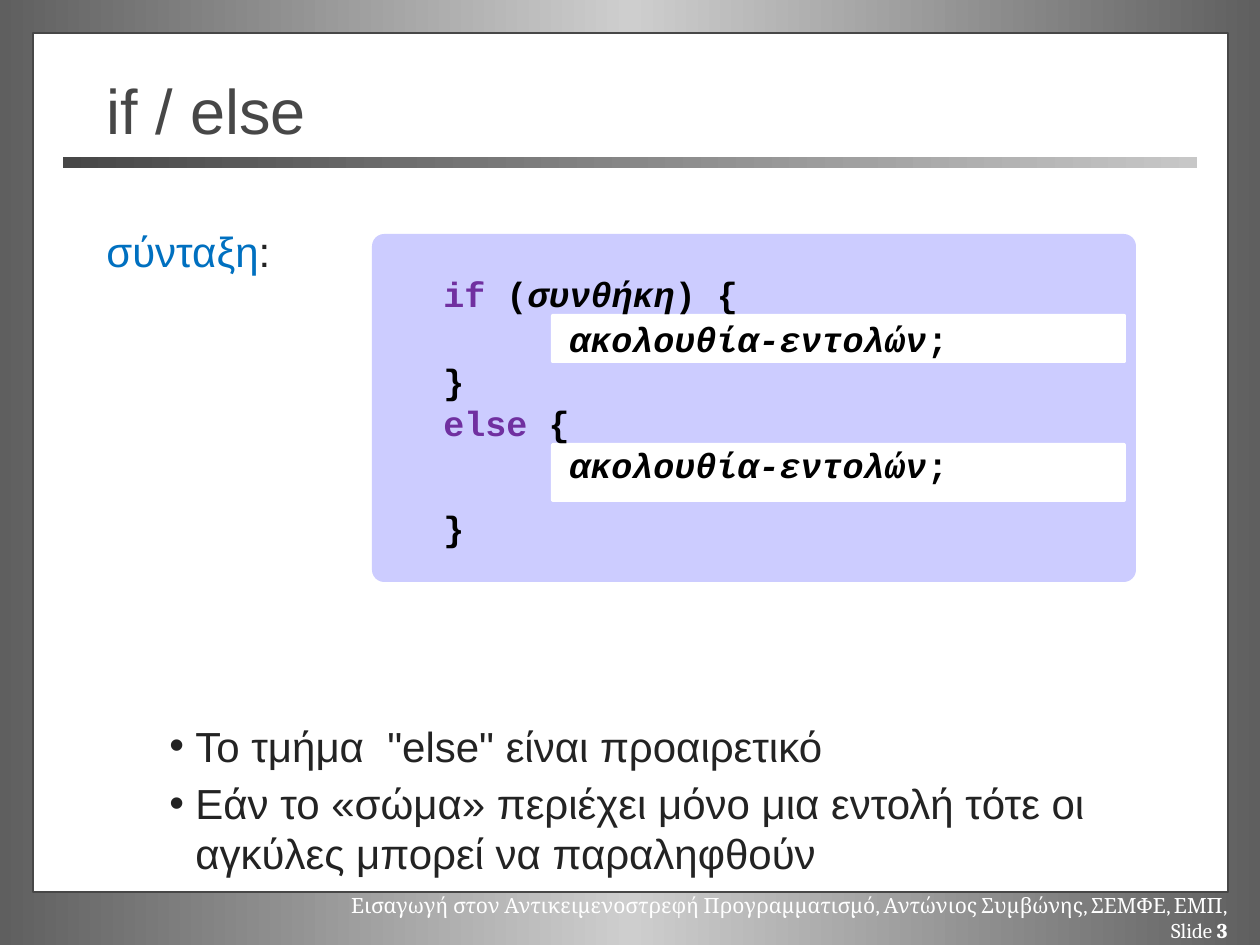
from lxml.etree import SubElement
from pptx import Presentation
from pptx.dml.color import RGBColor
from pptx.enum.shapes import MSO_SHAPE as Shape
from pptx.enum.text import MSO_ANCHOR as Anchor, PP_ALIGN as Align
from pptx.oxml.ns import qn
from pptx.util import Emu, Pt

EMU_PER_PX = 914400 / 126
WHITE, BLACK, DARK, INK = "FFFFFF", "000000", "474747", "232323"
PURPLE, BLUE, LAVENDER = "7030A0", "0070C0", "CCCCFF"

BODY = {"name": "Arial", "size": Pt(24), "color": INK}
TITLE = {"name": "Arial", "size": Pt(36), "color": DARK}
FOOTER = {"name": "Cambria", "size": Pt(12), "color": WHITE}
CODE = {"name": "Courier New", "size": Pt(20), "bold": True, "italic": False, "color": BLACK}
KEYWORD = {**CODE, "color": PURPLE}
PLACEHOLDER_WORD = {**CODE, "italic": True}


def px(length):
    return Emu(round(length * EMU_PER_PX))


def rgb(value):
    return RGBColor.from_string(value)


def place(item, box):
    for side, length in zip(("left", "top", "width", "height"), box):
        setattr(item, side, px(length))


def gradient(fill, owner, colors):
    fill.gradient()
    fill.gradient_angle = 0
    stops = next(owner.iter(qn("a:gsLst")))
    for stop in list(stops):
        stops.remove(stop)
    for index, value in enumerate(colors):
        position = str(100000 * index // (len(colors) - 1))
        stop = SubElement(stops, qn("a:gs"), pos=position)
        SubElement(stop, qn("a:srgbClr"), val=value)


def add_block(slide, box, fill=None, line=None, radius=None):
    kind = Shape.RECTANGLE if radius is None else Shape.ROUNDED_RECTANGLE
    block = slide.shapes.add_shape(kind, *map(px, box))
    block.shadow.inherit = False
    if radius is not None:
        block.adjustments[0] = radius
    if fill:
        block.fill.solid()
        block.fill.fore_color.rgb = rgb(fill)
    if line:
        block.line.color.rgb = rgb(line)
        block.line.width = Pt(1)
    else:
        block.line.fill.background()
    return block


def write_line(paragraph, parts, **layout):
    for key, value in layout.items():
        setattr(paragraph, key, value)
    for text, style in parts:
        run = paragraph.add_run()
        run.text = text
        for key, value in style.items():
            if key == "color":
                run.font.color.rgb = rgb(value)
            else:
                setattr(run.font, key, value)


def add_text(slide, box, lines, wrap=True, **layout):
    frame = slide.shapes.add_textbox(*map(px, box)).text_frame
    frame.word_wrap = wrap
    for index, parts in enumerate(lines):
        paragraph = frame.add_paragraph() if index else frame.paragraphs[0]
        write_line(paragraph, parts, **layout)
    return frame


def indent(paragraph, left, first=0):
    properties = paragraph._p.get_or_add_pPr()
    properties.set("marL", str(px(left)))
    properties.set("indent", str(px(first)))
    return properties


def add_frame(slide, box):
    left, top, width, height = box
    gradient(slide.background.fill, slide.element, ("5F5F5F", "CECECE", "5F5F5F"))
    add_block(slide, box, WHITE, DARK)
    bar = add_block(slide, (left + 30, top + 124, width - 61, 11))
    gradient(bar.fill, bar.element, (DARK, "C7C7C7"))
    credit = "Εισαγωγή στον Αντικειμενοστρεφή Προγραμματισμό, Αντώνιος Συμβώνης, ΣΕΜΦΕ, ΕΜΠ, Slide "
    parts = [(credit, FOOTER), ("3", {**FOOTER, "bold": True})]
    add_text(slide, (left + 287, top + height - 6, 920, 38), [parts], alignment=Align.RIGHT)


def add_title(slide, box):
    title = slide.shapes.title
    place(title, box)
    title.text_frame.vertical_anchor = Anchor.MIDDLE
    write_line(title.text_frame.paragraphs[0], [("if / else", TITLE)], alignment=Align.LEFT)
    title.element.getparent().append(title.element)


def add_syntax(slide, box):
    left, top, width, height = box
    add_block(slide, box, LAVENDER, radius=0.035)
    for offset, depth in ((80, 49), (209, 59)):
        add_block(slide, (left + 179, top + offset, 575, depth), WHITE, radius=0.037)

    statements = [("ακολουθία-εντολών", PLACEHOLDER_WORD), (";", CODE)]
    code = (
        (1, 0, [("if", KEYWORD), (" (", CODE), ("συνθήκη", PLACEHOLDER_WORD), (") {", CODE)]),
        (2, 2, statements),
        (1, 0, [("}", CODE)]),
        (1, 0, [("else ", KEYWORD), ("{", CODE)]),
        (2, 0, statements),
        (1, 12, [("}", CODE)]),
    )
    frame = add_text(slide, (left - 67, top - 35, 861, 403),
                     [parts for _, _, parts in code], line_spacing=Pt(24))
    frame.margin_top = px(73)
    for paragraph, (depth, gap, _) in zip(frame.paragraphs, code):
        indent(paragraph, depth * 126)
        paragraph.space_before = Pt(gap)


def add_label(slide, box):
    add_text(slide, box, [[("σύνταξη", {**BODY, "color": BLUE}), (":", BODY)]], wrap=False)


def add_remarks(slide, box):
    remarks = (
        'Το τμήμα  "else" είναι προαιρετικό',
        "Εάν το «σώμα» περιέχει μόνο μια εντολή τότε οι αγκύλες μπορεί να παραληφθούν",
    )
    frame = add_text(slide, box, [[(remark, BODY)] for remark in remarks],
                     space_before=Pt(4))
    for paragraph in frame.paragraphs:
        properties = indent(paragraph, 26, -26)
        SubElement(properties, qn("a:buFont"), typeface="Arial")
        SubElement(properties, qn("a:buChar"), char="•")


def main():
    deck = Presentation()
    deck.slide_width, deck.slide_height = px(1260), px(945)
    slide = deck.slides.add_slide(deck.slide_layouts[5])
    add_frame(slide, (33, 33, 1195, 859))
    add_title(slide, (94, 70, 1071, 78))
    add_syntax(slide, (372, 234, 764, 348))
    add_label(slide, (94, 219, 192, 63))
    add_remarks(slide, (157, 714, 1008, 174))
    deck.save("out.pptx")


if __name__ == "__main__":
    main()
